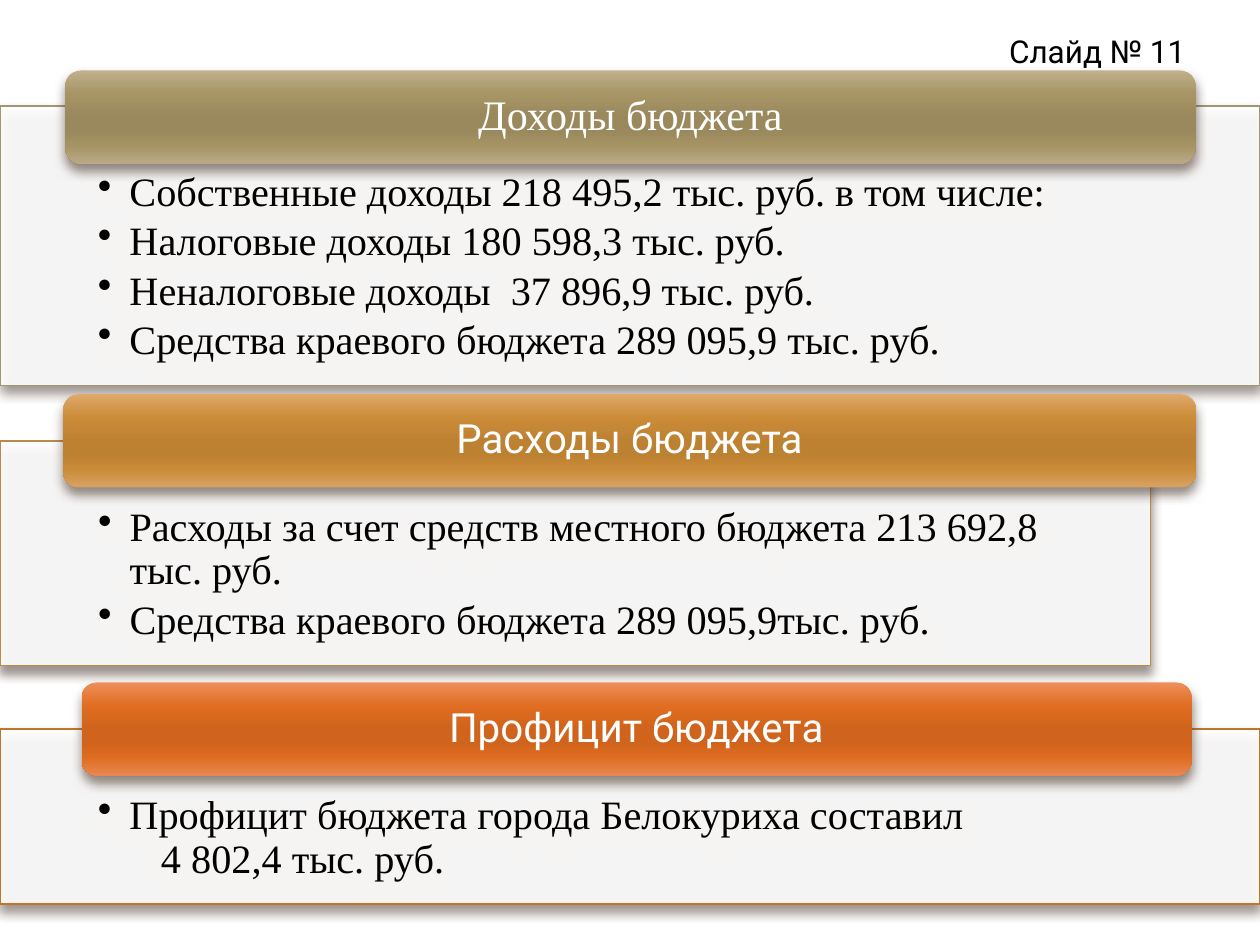
from lxml import etree
from pptx import Presentation
from pptx.dml.color import RGBColor
from pptx.enum.shapes import MSO_SHAPE
from pptx.enum.text import MSO_ANCHOR, PP_ALIGN
from pptx.oxml import parse_xml
from pptx.oxml.ns import nsdecls, qn
from pptx.util import Pt

RECT, ROUNDED = MSO_SHAPE.RECTANGLE, MSO_SHAPE.ROUNDED_RECTANGLE
TOP, MIDDLE = MSO_ANCHOR.TOP, MSO_ANCHOR.MIDDLE
CENTER, LEFT = PP_ALIGN.CENTER, PP_ALIGN.LEFT
SERIF, SANS = "Times New Roman", "Roboto"
STOPS = (0, 25, 50, 65, 80, 100)
INDENT = 18

SECTIONS = [
    {
        "heading": "Доходы бюджета", "font": SERIF, "size": 24,
        "panel": (0, 60.5, 720, 160), "header": (37.4, 40.3, 645.8, 53.3),
        "line": "A19574",
        "gradient": ("C0B18C", "A69465", "9A895C", "9A895C", "A59364", "BAAA85"),
        "items": ["Собственные доходы 218 495,2 тыс. руб. в том числе:",
                  "Налоговые доходы 180 598,3 тыс. руб.",
                  "Неналоговые доходы  37 896,9 тыс. руб.",
                  "Средства краевого бюджета 289 095,9 тыс. руб."],
    },
    {
        "heading": "Расходы бюджета", "font": SANS, "size": 23,
        "panel": (0, 252, 657.5, 128.2), "header": (36.2, 225.3, 647.3, 53.3),
        "line": "B58C4A",
        "gradient": ("DEA96B", "CB8C38", "BD8132", "BD8132", "CA8B38", "D8A263"),
        "items": ["Расходы за счет средств местного бюджета 213 692,8 тыс. руб.",
                  "Средства краевого бюджета 289 095,9тыс. руб."],
    },
    {
        "heading": "Профицит бюджета", "font": SANS, "size": 23,
        "panel": (0, 416.7, 720, 100), "header": (46.6, 390, 634.3, 53.3),
        "line": "C17529",
        "gradient": ("EE8F5B", "E06D21", "D0641C", "D0641C", "DE6C20", "E88852"),
        "items": ["Профицит бюджета города Белокуриха составил"],
        "continuation": "4 802,4 тыс. руб.",
    },
]


def color(value):
    """Turn a hex string into a colour."""
    return RGBColor.from_string(value)


def set_font(paragraph, name, size, value):
    """Format the font of a whole paragraph."""
    paragraph.font.name = name
    paragraph.font.size = Pt(size)
    paragraph.font.color.rgb = color(value)


def set_frame(frame, anchor, left, top, right, bottom):
    """Set wrapping, anchor and insets of a text frame."""
    frame.word_wrap = True
    frame.vertical_anchor = anchor
    frame.margin_left, frame.margin_top = Pt(left), Pt(top)
    frame.margin_right, frame.margin_bottom = Pt(right), Pt(bottom)


def add_shadow(shape):
    """Give a shape a soft brown shadow below it."""
    shape.shadow.inherit = False
    effects = shape._element.spPr.find(qn("a:effectLst"))
    effects.append(parse_xml(
        f'<a:outerShdw {nsdecls("a")} blurRad="{Pt(6)}" dist="{Pt(4)}" dir="5400000" '
        'rotWithShape="0"><a:srgbClr val="4E3B30"><a:alpha val="60000"/></a:srgbClr>'
        '</a:outerShdw>'))


def fill_gradient(shape, values):
    """Fill a shape with a vertical gradient over the shared stops."""
    shape.fill.gradient()
    gradient = shape._element.spPr.find(qn("a:gradFill"))
    stops = "".join(f'<a:gs pos="{pos * 1000}"><a:srgbClr val="{value}"/></a:gs>'
                    for pos, value in zip(STOPS, values))
    gradient.getparent().replace(gradient, parse_xml(
        f'<a:gradFill {nsdecls("a")} rotWithShape="1"><a:gsLst>{stops}</a:gsLst>'
        '<a:lin ang="5400000" scaled="0"/></a:gradFill>'))


def add_panel(slide, box, section):
    """Draw the panel that lists the items of a section."""
    panel = slide.shapes.add_shape(RECT, *map(Pt, box))
    panel.fill.solid()
    panel.fill.fore_color.rgb = color("FFFFFF")
    fill_color = panel._element.spPr.find(qn("a:solidFill"))[0]
    etree.SubElement(fill_color, qn("a:alpha"), val="90000")
    panel.line.color.rgb = color(section["line"])
    panel.line.width = Pt(0.79)
    add_shadow(panel)
    frame = panel.text_frame
    set_frame(frame, TOP, 56, 37.5, 56, 13)
    continuation = section.get("continuation")
    lines = [(text, True) for text in section["items"]]
    if continuation:
        lines.append((continuation, False))
    for index, (text, bulleted) in enumerate(lines):
        item = frame.paragraphs[0] if index == 0 else frame.add_paragraph()
        item.text = text
        item.alignment = LEFT
        item.line_spacing = 0.9
        item.space_after = Pt(0 if continuation else 3.5)
        set_font(item, SERIF, 23, "000000")
        properties = item._p.get_or_add_pPr()
        properties.set("marL", str(Pt(INDENT if bulleted else 2 * INDENT)))
        properties.set("indent", str(Pt(-INDENT if bulleted else 0)))
        if bulleted:
            bullet = parse_xml(f'<a:buChar {nsdecls("a")} char="•"/>')
            properties.find(qn("a:defRPr")).addprevious(bullet)


def add_header(slide, box, section):
    """Draw the rounded heading of a section."""
    header = slide.shapes.add_shape(ROUNDED, *map(Pt, box))
    fill_gradient(header, section["gradient"])
    header.line.fill.background()
    add_shadow(header)
    set_frame(header.text_frame, MIDDLE, 21, 0, 21, 0)
    heading = header.text_frame.paragraphs[0]
    heading.text = section["heading"]
    heading.alignment = CENTER
    heading.line_spacing = 0.9
    set_font(heading, section["font"], section["size"], "FFFFFF")


def add_slide_number(slide, box):
    """Write the slide label in the top corner."""
    label = slide.shapes.add_textbox(*map(Pt, box))
    label.text_frame.word_wrap = False
    number = label.text_frame.paragraphs[0]
    number.text = "Слайд № 11"
    set_font(number, SANS, 18, "000000")


def main():
    """Build the budget slide."""
    deck = Presentation()
    deck.slide_width, deck.slide_height = Pt(720), Pt(540)
    slide = deck.slides.add_slide(deck.slide_layouts[6])
    for section in SECTIONS:
        add_panel(slide, section["panel"], section)
        add_header(slide, section["header"], section)
    add_slide_number(slide, (569.5, 15, 121.7, 29))
    deck.save("out.pptx")


if __name__ == "__main__":
    main()
